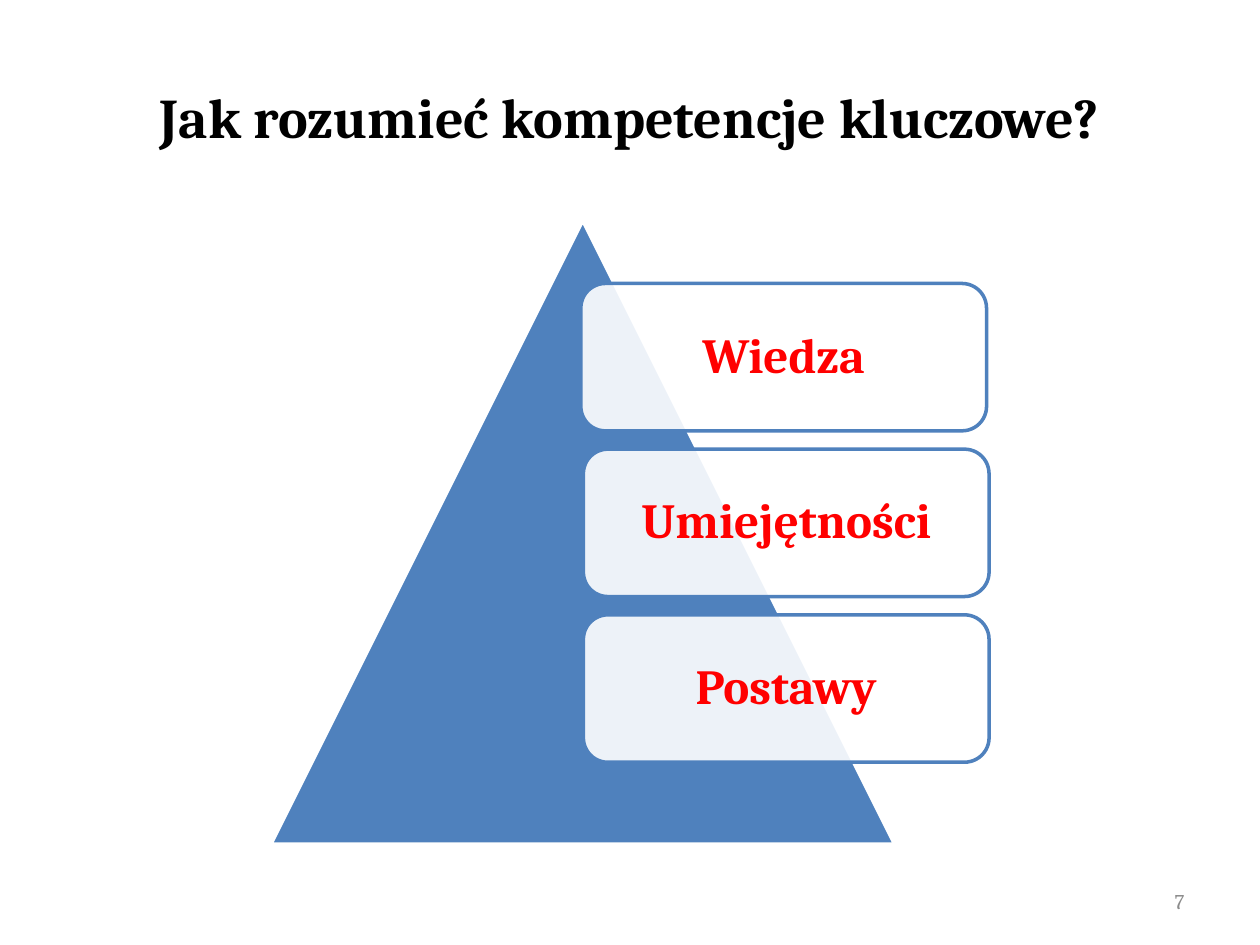
import pptx
import pptx.util
import pptx.dml.color
import pptx.enum.shapes
import pptx.enum.text
import pptx.oxml.ns
from lxml import etree

Inches = pptx.util.Inches
RGBColor = pptx.dml.color.RGBColor
Shapes = pptx.enum.shapes.MSO_SHAPE
Align = pptx.enum.text.PP_ALIGN

TITLE = "Jak rozumieć kompetencje kluczowe?"
COMPETENCES = [("Wiedza", 4.61), ("Umiejętności", 4.63), ("Postawy", 4.63)]
SLIDE_NUMBER = "7"

BLUE = RGBColor(0x4F, 0x81, 0xBD)
WHITE = RGBColor(0xFF, 0xFF, 0xFF)
BLACK = RGBColor(0, 0, 0)
RED = RGBColor(0xFF, 0, 0)
GRAY = RGBColor(0x8C, 0x8C, 0x8C)

CARD_TOP, CARD_WIDTH, CARD_HEIGHT, CARD_STEP = 2.25, 3.22, 1.17, 1.315


def write_text(shape, text, size, color, bold=False, align=Align.CENTER,
               inset=0.1, line_spacing=1.0):
    frame = shape.text_frame
    frame.word_wrap = True
    frame.vertical_anchor = pptx.enum.text.MSO_ANCHOR.MIDDLE
    frame.margin_left = frame.margin_right = Inches(inset)
    frame.margin_top = frame.margin_bottom = Inches(inset)
    paragraph = frame.paragraphs[0]
    paragraph.alignment = align
    paragraph.line_spacing = line_spacing
    run = paragraph.add_run()
    run.text = text
    run.font.name = "Cambria"
    run.font.size = pptx.util.Pt(size)
    run.font.bold = bold
    run.font.color.rgb = color


def add_shape(slide, kind, box, fill, line, opacity=100):
    shape = slide.shapes.add_shape(kind, *map(Inches, box))
    shape.shadow.inherit = False
    shape.fill.solid()
    shape.fill.fore_color.rgb = fill
    shape.line.color.rgb = line
    shape.line.width = pptx.util.Pt(2)
    if opacity < 100:
        qn = pptx.oxml.ns.qn
        color = shape.fill._xPr.find(qn("a:solidFill")).find(qn("a:srgbClr"))
        etree.SubElement(color, qn("a:alpha")).set("val", str(opacity * 1000))
    return shape


def main():
    presentation = pptx.Presentation()
    presentation.slide_width, presentation.slide_height = Inches(10), Inches(7.5)
    slide = presentation.slides.add_slide(presentation.slide_layouts[6])

    title = slide.shapes.add_textbox(*map(Inches, (0.5, 0.3, 9, 1.25)))
    write_text(title, TITLE, size=32, color=BLACK, bold=True)

    add_shape(slide, Shapes.ISOSCELES_TRIANGLE, (2.15, 1.75, 4.95, 4.95), BLUE, WHITE)

    for index, (name, left) in enumerate(COMPETENCES):
        box = (left, CARD_TOP + index * CARD_STEP, CARD_WIDTH, CARD_HEIGHT)
        card = add_shape(slide, Shapes.ROUNDED_RECTANGLE, box, WHITE, BLUE, opacity=90)
        write_text(card, name, size=28, color=RED, bold=True, inset=0.12, line_spacing=0.9)

    number = slide.shapes.add_textbox(*map(Inches, (7.17, 6.95, 2.33, 0.4)))
    write_text(number, SLIDE_NUMBER, size=12, color=GRAY, align=Align.RIGHT)

    presentation.save("out.pptx")


if __name__ == "__main__":
    main()
